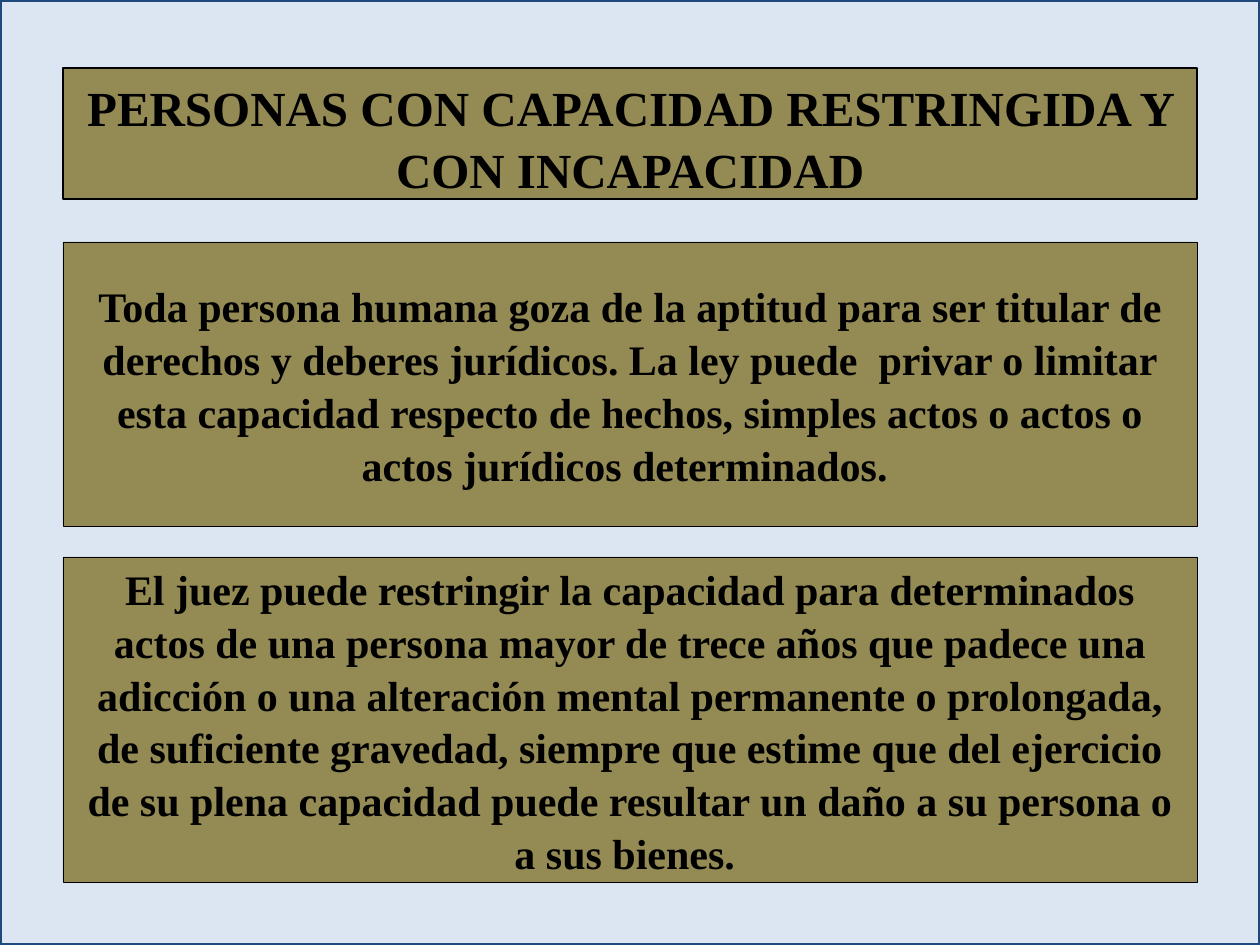
from pptx import Presentation
from pptx.util import Pt
from pptx.dml.color import RGBColor
from pptx.enum.shapes import MSO_SHAPE
from pptx.enum.text import MSO_ANCHOR, PP_ALIGN

RECT = MSO_SHAPE.RECTANGLE
TOP, MID = MSO_ANCHOR.TOP, MSO_ANCHOR.MIDDLE
CENTER = PP_ALIGN.CENTER
PX = 914400 / 126
HUES = {"back": "DCE6F2", "frame": "1F497D", "panel": "948A54", "ink": "000000"}
FONT = "Times New Roman"
LEFT, WIDE = 63, 1134

TITLE = "PERSONAS CON CAPACIDAD RESTRINGIDA Y CON INCAPACIDAD"
PANELS = [
    (242, 284, "Toda persona humana goza de la aptitud para ser titular de derechos y "
     "deberes jurídicos. La ley puede  privar o limitar esta capacidad respecto de "
     "hechos, simples actos o actos o actos jurídicos determinados. "),
    (557, 325, "El juez puede restringir la capacidad para determinados actos de una "
     "persona mayor de trece años que padece una adicción o una alteración mental "
     "permanente o prolongada, de suficiente gravedad, siempre que estime que del "
     "ejercicio de su plena capacidad puede resultar un daño a su persona o a sus "
     "bienes. "),
]


def emu(*px):
    return [round(n * PX) for n in px]


def hue(name):
    return RGBColor.from_string(HUES[name])


def paint(shape, fill, line, width):
    shape.fill.solid()
    shape.fill.fore_color.rgb = hue(fill)
    shape.line.color.rgb = hue(line)
    shape.line.width = Pt(width)


def write(shape, text, size, anchor):
    frame = shape.text_frame
    frame.text = text
    frame.word_wrap = True
    frame.vertical_anchor = anchor
    para = frame.paragraphs[0]
    para.alignment = CENTER
    para.line_spacing = 1.05
    font = para.font
    font.name, font.size, font.bold = FONT, Pt(size), True
    font.color.rgb = hue("ink")


def add_rect(slide, box):
    shape = slide.shapes.add_shape(RECT, *emu(*box))
    shape.shadow.inherit = False
    return shape


def add_back(slide, box):
    paint(add_rect(slide, box), "back", "frame", 2)


def add_panel(slide, box, text):
    shape = add_rect(slide, box)
    paint(shape, "panel", "ink", 0.25)
    write(shape, text, 24, MID)


def add_title(slide, box):
    title = slide.shapes.title
    title.left, title.top, title.width, title.height = emu(*box)
    paint(title, "panel", "ink", 0.75)
    write(title, TITLE, 28, TOP)
    slide.shapes._spTree.append(title._element)


def main():
    deck = Presentation()
    deck.slide_width, deck.slide_height = emu(1260, 945)
    slide = deck.slides.add_slide(deck.slide_layouts[5])
    add_back(slide, (0, 0, 1260, 945))
    for top, high, text in PANELS:
        add_panel(slide, (LEFT, top, WIDE, high), text)
    add_title(slide, (LEFT, 68, WIDE, 131))
    deck.save("out.pptx")


if __name__ == "__main__":
    main()
